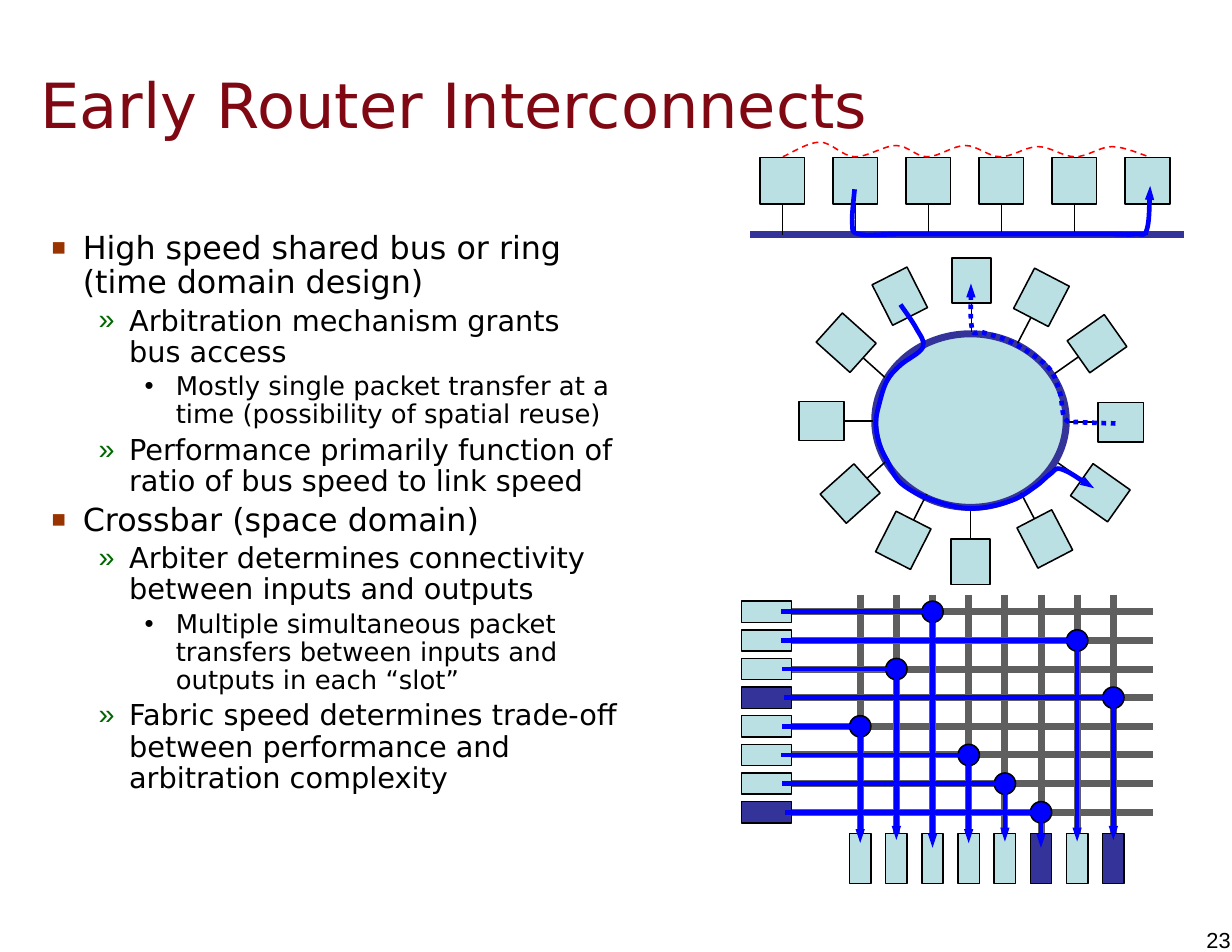
"""Build the slide on early router interconnects: bus, ring and crossbar."""
from math import cos, radians, sin

from lxml.etree import SubElement
from pptx import Presentation
from pptx.dml.color import RGBColor
from pptx.enum.dml import MSO_LINE
from pptx.enum.shapes import MSO_CONNECTOR, MSO_SHAPE
from pptx.enum.text import MSO_ANCHOR, PP_ALIGN
from pptx.oxml.ns import qn
from pptx.util import Pt

FONT = "DejaVu Sans"
BLACK, PALE, NAVY, BLUE, GREY, RED = "000000", "BBE0E3", "333399", "0000FF", "5F5F5F", "FF0000"
TITLE = "Early Router Interconnects"
BULLETS = [
    (0, "High speed shared bus or ring (time domain design)"),
    (1, "Arbitration mechanism grants bus access"),
    (2, "Mostly single packet transfer at a time (possibility of spatial reuse)"),
    (1, "Performance primarily function of ratio of bus speed to link speed"),
    (0, "Crossbar (space domain)"),
    (1, "Arbiter determines connectivity between inputs and outputs"),
    (2, "Multiple simultaneous packet transfers between inputs and outputs in each “slot”"),
    (1, "Fabric speed determines trade-off between performance and arbitration complexity"),
]
LEVELS = [
    {"size": 20.4, "left": 30.2, "hang": 20, "mark": "■", "color": "993300", "scale": 75},
    {"size": 18.5, "left": 60, "hang": 19.6, "mark": "»", "color": "006600", "scale": 100},
    {"size": 16.65, "left": 90, "hang": 20, "mark": "•", "color": BLACK, "scale": 100},
]

BUS_Y, BUS_BOXES = 150.8, 6
BUS_ARBITRATION = [(503.3, 100.8), (527, 91.4), (549.4, 100.8), (576, 93.6), (596.2, 100.8),
                   (620.6, 93.6), (643, 100.8), (667.4, 94.3), (691.2, 100.8), (715, 94.3),
                   (738.7, 100.8)]
BUS_TRANSFER = [(549.4, 121.7), (547.9, 143.3), (552.2, 150.5), (580.3, 150.5), (635.8, 150.5),
                (676.8, 150.5), (712.1, 150.5), (730.1, 150.5), (737.3, 147.6), (739.4, 119.5)]

RING_CENTER, RING_SIZE = (623.9, 270.4), (123.1, 111.6)
RING_BOX, RING_STEM = (25.2, 29.2), 18.7
RING_BOXES = [
    (624.6, 180.4, 0), (578.5, 190.4, -26.9), (544, 220.3, -48.1), (720.4, 271.4, 90),
    (623.9, 361.1, 0), (528.1, 270.7, 90), (669.5, 191.2, 27.5), (705.2, 221, 54.8),
    (580.7, 347.4, 26.9), (546.5, 317.3, 48.1), (671.7, 346.5, -27.5), (707.4, 316.8, -54.8),
]
RING_TRANSFER = [(578.9, 195.8), (589, 211), (593.3, 223.2), (578.9, 234.7), (570.2, 244.8),
                 (565.2, 259.9), (563, 272.2), (565.2, 285.1), (570.2, 295.9), (579.6, 311),
                 (600.5, 321.8), (625, 326.9), (650.2, 321.8), (666, 312.5), (675.4, 304.6),
                 (682.6, 301.7), (703.4, 313.9)]
RING_REUSE = [(717.1, 272.2), (694.8, 271.4), (684.7, 269.3), (681.1, 251.3), (673.2, 235.4),
              (650.9, 220.3), (632.2, 213.8), (625, 211.7), (624.2, 182.2)]

ROWS = [393.3 + 18.41 * i for i in range(8)]
COLUMNS = [553 + 23.25 * i for i in range(8)]
NAVY_INPUTS, NAVY_OUTPUTS = {3, 7}, {5, 7}
ROUTES = [(2, 502, 545), (6, 502, 541), (1, 503, 540), (7, 504, 540),
          (0, 503, 542), (3, 502, 542), (4, 503, 541), (5, 505, 545)]


def rgb(value):
    return RGBColor.from_string(value)


def set_line(line, color, width, dash=None, arrow=False):
    line.color.rgb = rgb(color)
    line.width = Pt(width)
    if dash:
        line.dash_style = dash
    if arrow:
        SubElement(line._get_or_add_ln(), qn("a:tailEnd"), type="triangle", w="sm", len="med")


def add_block(shapes, kind, center, size, fill, line=(BLACK, 1)):
    (x, y), (width, height) = center, size
    shape = shapes.add_shape(kind, Pt(x - width / 2), Pt(y - height / 2), Pt(width), Pt(height))
    shape.shadow.inherit = False
    shape.fill.solid()
    shape.fill.fore_color.rgb = rgb(fill)
    set_line(shape.line, *line)
    return shape


def add_line(shapes, start, end, color, width, box=None, side=None):
    connector = shapes.add_connector(MSO_CONNECTOR.STRAIGHT, *map(Pt, (*start, *end)))
    SubElement(connector._element.spPr, qn("a:effectLst"))
    set_line(connector.line, color, width)
    if box is not None:
        connector.begin_connect(box, side)
        connector.begin_x, connector.begin_y = map(Pt, start)


def add_route(shapes, points, color, width, dash=None, arrow=True):
    first, *rest = [(Pt(x), Pt(y)) for x, y in points]
    builder = shapes.build_freeform(*first, scale=1.0)
    builder.add_line_segments(rest, close=False)
    shape = builder.convert_to_shape()
    shape.shadow.inherit = False
    shape.fill.background()
    set_line(shape.line, color, width, dash, arrow)
    return shape


def add_curve(shapes, knots, *style, **options):
    """Draw a route whose segments are Catmull-Rom curves through the knots."""
    shape = add_route(shapes, knots, *style, **options)
    padded = [knots[0], *knots, knots[-1]]
    segments = list(shape._element.iter(qn("a:lnTo")))
    for segment, a, b, c, d in zip(segments, padded, padded[1:], padded[2:], padded[3:]):
        controls = [[q + (r - p) / 6 for p, q, r in zip(a, b, c)],
                    [q - (r - p) / 6 for p, q, r in zip(b, c, d)]]
        end = segment[0]
        segment.tag = qn("a:cubicBezTo")
        for x, y in controls:
            SubElement(segment, qn("a:pt"), x=str(Pt(x) - shape.left), y=str(Pt(y) - shape.top))
        segment.append(end)


def add_text(paragraph, text, size, color, font=FONT):
    run = paragraph.add_run()
    run.text = text
    run.font.size, run.font.name = Pt(size), font
    run.font.color.rgb = rgb(color)


def set_margins(frame, horizontal, vertical):
    frame.margin_left = frame.margin_right = Pt(horizontal)
    frame.margin_top = frame.margin_bottom = Pt(vertical)


def add_title(slide):
    title = slide.shapes.title
    title.left, title.top, title.width, title.height = map(Pt, (18, 15.8, 673.2, 102.2))
    frame = title.text_frame
    set_margins(frame, 7.9, 4.3)
    frame.word_wrap, frame.vertical_anchor = True, MSO_ANCHOR.MIDDLE
    frame.paragraphs[0].alignment = PP_ALIGN.LEFT
    add_text(frame.paragraphs[0], TITLE, 40, "7F0813")


def add_bullets(slide):
    frame = slide.shapes.add_textbox(*map(Pt, (15.1, 144.7, 390.2, 429.1))).text_frame
    set_margins(frame, 7.9, 4.3)
    frame.word_wrap = True
    for index, (level, text) in enumerate(BULLETS):
        style = LEVELS[level]
        paragraph = frame.add_paragraph() if index else frame.paragraphs[0]
        paragraph.level, paragraph.line_spacing = level, 0.9
        paragraph.space_before = Pt(0.2 * style["size"] if index else 0)
        properties = paragraph._p.get_or_add_pPr()
        properties.set("marL", str(Pt(style["left"])))
        properties.set("indent", str(-Pt(style["hang"])))
        SubElement(SubElement(properties, qn("a:buClr")), qn("a:srgbClr"), val=style["color"])
        SubElement(properties, qn("a:buSzPct"), val=str(style["scale"] * 1000))
        SubElement(properties, qn("a:buFont"), typeface="Arial")
        SubElement(properties, qn("a:buChar"), char=style["mark"])
        add_text(paragraph, text, style["size"], BLACK)


def add_number(slide):
    frame = slide.shapes.add_textbox(*map(Pt, (775.4, 595.4, 15.8, 17.3))).text_frame
    set_margins(frame, 0, 0)
    frame.word_wrap, frame.vertical_anchor = False, MSO_ANCHOR.MIDDLE
    frame.paragraphs[0].alignment = PP_ALIGN.RIGHT
    add_text(frame.paragraphs[0], "23", 14, BLACK, "Arial")


def draw_bus(shapes):
    add_line(shapes, (482.4, BUS_Y), (761, BUS_Y), NAVY, 4.5)
    for i in range(BUS_BOXES):
        x = 502.9 + 46.95 * i
        box = add_block(shapes, MSO_SHAPE.RECTANGLE, (x, 116.2), (28.8, 30.2), PALE)
        add_line(shapes, (x, 131.3), (x, BUS_Y), BLACK, 1, box, 2)
    add_curve(shapes, BUS_ARBITRATION, RED, 1, dash=MSO_LINE.DASH, arrow=False)
    add_curve(shapes, BUS_TRANSFER, BLUE, 3)


def draw_ring(shapes):
    add_block(shapes, MSO_SHAPE.OVAL, RING_CENTER, RING_SIZE, PALE, (NAVY, 4.5))
    for x, y, angle in RING_BOXES:
        box = add_block(shapes, MSO_SHAPE.RECTANGLE, (x, y), RING_BOX, PALE)
        box.rotation = angle
        dx, dy = -sin(radians(angle)), cos(radians(angle))
        inward = dx * (RING_CENTER[0] - x) + dy * (RING_CENTER[1] - y) > 0
        sign, side = (1, 2) if inward else (-1, 0)
        near = sign * RING_BOX[1] / 2
        far = near + sign * RING_STEM
        add_line(shapes, (x + near * dx, y + near * dy), (x + far * dx, y + far * dy),
                 BLACK, 1, box, side)
    add_curve(shapes, RING_TRANSFER, BLUE, 3)
    add_curve(shapes, RING_REUSE, BLUE, 3, dash=MSO_LINE.ROUND_DOT)


def draw_crossbar(shapes):
    for y in ROWS:
        add_line(shapes, (507.6, y), (741.4, y), GREY, 4.5)
    for x in COLUMNS:
        add_line(shapes, (x, 382.3), (x, 540), GREY, 4.5)
    for i, y in enumerate(ROWS):
        add_block(shapes, MSO_SHAPE.RECTANGLE, (492.8, y), (32.4, 13.7),
                  NAVY if i in NAVY_INPUTS else PALE)
    for i, x in enumerate(COLUMNS):
        add_block(shapes, MSO_SHAPE.RECTANGLE, (x, 551.9), (13.7, 32.4),
                  NAVY if i in NAVY_OUTPUTS else PALE)
    for y, (column, _, _) in zip(ROWS, ROUTES):
        add_block(shapes, MSO_SHAPE.OVAL, (COLUMNS[column], y), (13.7, 13.7), BLUE)
    for y, (column, start, end) in zip(ROWS, ROUTES):
        x = COLUMNS[column]
        add_route(shapes, [(start, y), (x, y), (x, end)], BLUE, 3)


def main():
    presentation = Presentation()
    presentation.slide_width, presentation.slide_height = Pt(792), Pt(612)
    slide = presentation.slides.add_slide(presentation.slide_layouts[5])
    add_number(slide)
    add_title(slide)
    add_bullets(slide)
    for draw in (draw_bus, draw_ring, draw_crossbar):
        draw(slide.shapes.add_group_shape().shapes)
    presentation.save("out.pptx")


if __name__ == "__main__":
    main()
